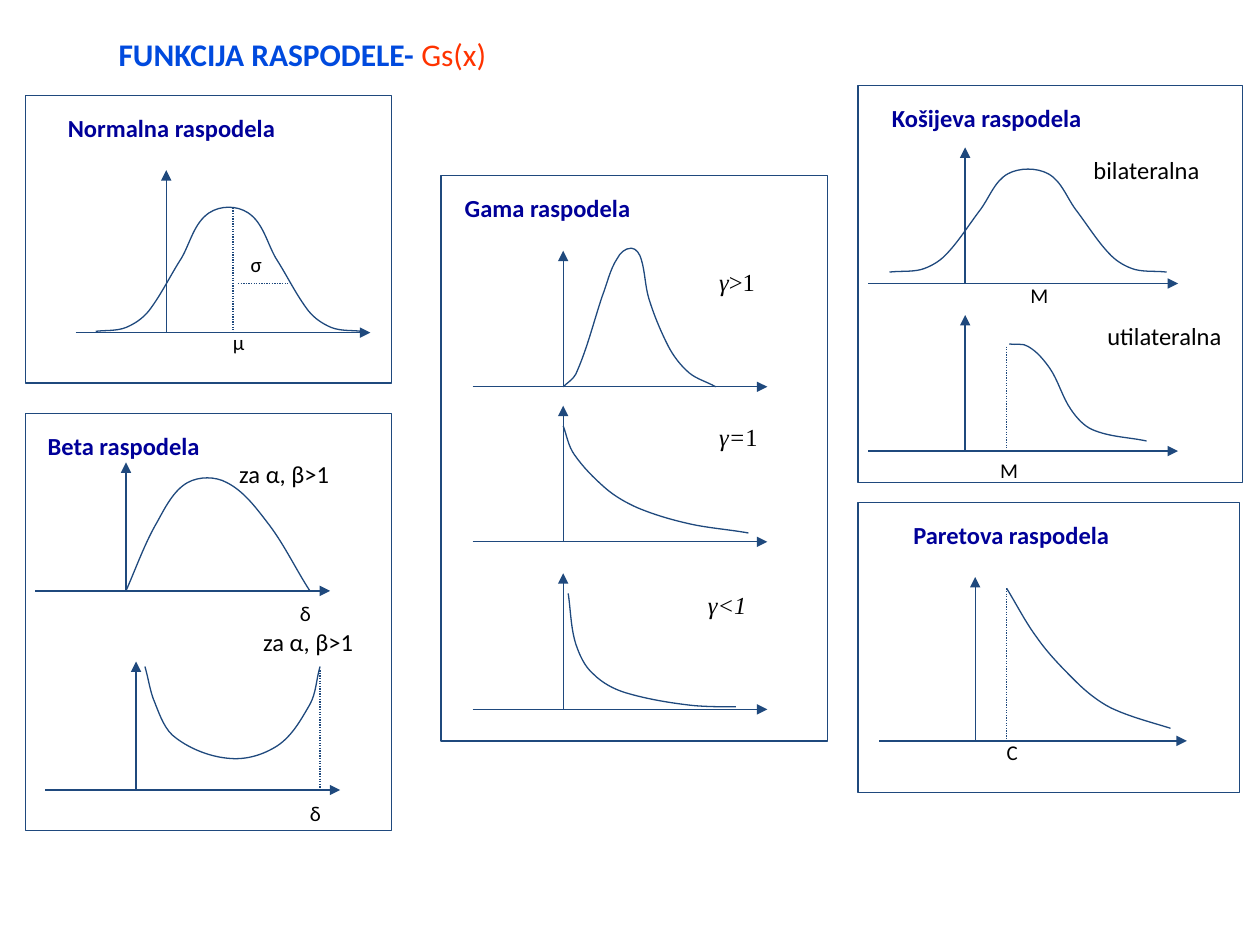
from dataclasses import dataclass, field
from math import hypot

from lxml.etree import SubElement
from pptx import Presentation
from pptx.dml.color import RGBColor
from pptx.enum.dml import MSO_LINE
from pptx.enum.shapes import MSO_CONNECTOR, MSO_SHAPE
from pptx.enum.text import MSO_ANCHOR, MSO_AUTO_SIZE, PP_ALIGN
from pptx.oxml.ns import qn
from pptx.util import Pt

PX = 9144  # EMU per px, 100 px to the inch
COLORS = {"line": "1F497D", "heading": "000099", "title": "004ADE",
          "accent": "FF3300", "text": "000000"}
SANS, SERIF = "Calibri", "Times New Roman"
Point = tuple[int, int]


@dataclass
class Label:
    x: int
    y: int
    text: str
    w: int = 30
    size: int = 12
    roman: str = ""  # upright ending after an italic start
    font: str = SANS
    tight: bool = False  # no insets


@dataclass
class Axes:
    left: int
    base: int
    width: int = 234
    height: int = 108
    offset: int = 72  # from the left end to the vertical axis


@dataclass
class Panel:
    heading: str
    indent: int
    frame: tuple[int, int, int, int]
    axes: list[Axes]
    curves: list[list[Point]]  # points that a smooth curve passes through
    labels: list[Label]
    dotted: list[tuple[int, int, int, int]] = field(default_factory=list)


BELL_HALF = [(0, 108), (24, 105), (42, 92), (68, 50), (90, 14)]
BELL = BELL_HALF + [(210 - x, y) for x, y in reversed(BELL_HALF)]


def bell(left: int, top: int, w: int, h: int) -> list[Point]:
    """The symmetric bell curve fitted into a box."""
    return [(left + round(x * w / 210), top + round(y * h / 108)) for x, y in BELL]


def gamma(x: int, base: int, text: str, roman: str = "") -> Label:
    return Label(x, base - 100, text, 53, 14, roman, SERIF)


def tight(x: int, y: int, text: str) -> Label:
    return Label(x, y, text, 10, tight=True)


GAMMA_BASES = (307, 430, 563)
PANELS = [
    Panel("Gama raspodela", 9, (350, 139, 307, 449),
          [Axes(375, base) for base in GAMMA_BASES],
          [[(447, 307), (457, 297), (478, 235), (490, 205), (501, 197),
            (509, 206), (515, 237), (530, 274), (547, 296), (568, 307)],
           [(447, 338), (456, 361), (480, 387), (506, 403), (544, 415), (594, 423)],
           [(451, 471), (457, 511), (471, 535), (497, 550), (550, 560), (584, 561)]],
          [gamma(x, base, *text) for x, base, text in
           zip((561, 561, 552), GAMMA_BASES, (("γ", ">1"), ("γ=", "1"), ("γ<1",)))]),
    Panel("Beta raspodela", 8, (20, 328, 291, 331),
          [Axes(28, 469, height=102), Axes(36, 627, height=102)],
          [[(100, 469), (125, 414), (149, 383), (180, 383), (214, 417), (246, 469)],
           [(115, 529), (123, 558), (140, 586), (183, 602), (220, 592),
            (246, 559), (254, 529)]],
          [Label(180, 359, "za α, β>1", 101, 14), Label(199, 493, "za α, β>1", 101, 14),
           tight(238, 477, "δ"), tight(246, 635, "δ")],
          [(254, 532, 254, 627)]),
    Panel("Normalna raspodela", 24, (20, 76, 291, 228),
          [Axes(60, 264, height=129)],
          [bell(76, 155, 211, 108)],
          [Label(175, 257, "μ"), Label(189, 195, "σ")],
          [(189, 225, 230, 225), (185, 165, 185, 264)]),
    Panel("Košijeva raspodela", 17, (681, 68, 305, 315),
          [Axes(689, base, 246, offset=77) for base in (225, 358)],
          [bell(706, 126, 220, 90),
           [(801, 273), (816, 275), (833, 292), (850, 325), (867, 341), (910, 350)]],
          [Label(858, 118, "bilateralna", 110, 14),
           Label(869, 250, "utilateralna", 115, 14),
           Label(808, 219, "M"), Label(784, 358, "M")],
          [(799, 275, 799, 358)]),
    Panel("Paretova raspodela", 34, (681, 399, 303, 230),
          [Axes(698, 588, 244, 130, 76)],
          [[(799, 467), (823, 506), (854, 541), (882, 562), (929, 578)]],
          [tight(799, 587, "C")],
          [(799, 467, 799, 587)]),
]


def rgb(name: str) -> RGBColor:
    return RGBColor.from_string(COLORS[name])


def style_line(sp) -> None:
    sp.line.color.rgb = rgb("line")
    sp.line.width = Pt(0.75)


def style_outline(sp) -> None:
    """Unfilled shape with the common line."""
    sp.fill.background()
    sp.shadow.inherit = False
    style_line(sp)


def add_line(shapes, ends: tuple[int, int, int, int], dotted: bool = False) -> None:
    """Dotted guide, or axis with an arrowhead at its end."""
    sp = shapes.add_connector(MSO_CONNECTOR.STRAIGHT, *(v * PX for v in ends))
    style_line(sp)
    if dotted:
        sp.line.dash_style = MSO_LINE.ROUND_DOT
    else:
        SubElement(sp.line._get_or_add_ln(), qn("a:tailEnd"), type="triangle")
    SubElement(sp._element.spPr, qn("a:effectLst"))


def smooth(knots: list[Point]) -> list[Point]:
    """Bezier points of a curve whose tangents follow the neighbouring knots."""
    tangents = []
    for i in range(len(knots)):
        (x0, y0), (x1, y1) = knots[max(i - 1, 0)], knots[min(i + 1, len(knots) - 1)]
        d = hypot(x1 - x0, y1 - y0)
        tangents.append(((x1 - x0) / d, (y1 - y0) / d))
    points = knots[:1]
    for i, ((x0, y0), (x1, y1)) in enumerate(zip(knots, knots[1:])):
        reach = hypot(x1 - x0, y1 - y0) / 3
        (u0, v0), (u1, v1) = tangents[i:i + 2]
        points += [(x0 + reach * u0, y0 + reach * v0),
                   (x1 - reach * u1, y1 - reach * v1), (x1, y1)]
    return points


def add_curve(shapes, knots: list[Point]) -> None:
    points = smooth(knots)
    builder = shapes.build_freeform(*points[0], scale=PX)
    builder.add_line_segments([(round(x), round(y)) for x, y in points[1:]], close=False)
    sp = builder.convert_to_shape()
    style_outline(sp)
    # Every three straight steps become one cubic Bezier
    outline = next(sp._element.iter(qn("a:path")))
    steps = outline.findall(qn("a:lnTo"))
    for i in range(0, len(steps), 3):
        bezier = SubElement(outline, qn("a:cubicBezTo"))
        for step in steps[i:i + 3]:
            bezier.append(step[0])
            outline.remove(step)


def add_run(p, text: str, font: str, size: int, color: str,
            bold: bool = False, italic: bool = False) -> None:
    r = p.add_run()
    r.text = text
    r.font.name, r.font.size = font, Pt(size)
    r.font.bold, r.font.italic = bold, italic
    r.font.color.rgb = rgb(color)


def add_label(shapes, label: Label, heading: bool = False) -> None:
    h = 20 if label.tight else 33 if label.size == 14 else 30
    sp = shapes.add_textbox(*(v * PX for v in (label.x, label.y, label.w, h)))
    tf = sp.text_frame
    tf.word_wrap = heading
    tf.auto_size = MSO_AUTO_SIZE.SHAPE_TO_FIT_TEXT
    if label.tight:
        tf.margin_left = tf.margin_right = tf.margin_top = tf.margin_bottom = 0
    p = tf.paragraphs[0]
    color = "heading" if heading else "text"
    add_run(p, label.text, label.font, label.size, color, heading, label.font == SERIF)
    if label.roman:
        add_run(p, label.roman, label.font, label.size, color)


def add_panel(s, panel: Panel) -> None:
    shapes = s.shapes.add_group_shape().shapes
    style_outline(shapes.add_shape(MSO_SHAPE.RECTANGLE, *(v * PX for v in panel.frame)))
    left, top = panel.frame[:2]
    add_label(shapes, Label(left + panel.indent, top + 9, panel.heading, 230, 14), True)
    for a in panel.axes:
        x = a.left + a.offset
        add_line(shapes, (a.left, a.base, a.left + a.width, a.base))
        add_line(shapes, (x, a.base, x, a.base - a.height))
    for knots in panel.curves:
        add_curve(shapes, knots)
    for ends in panel.dotted:
        add_line(shapes, ends, dotted=True)
    for label in panel.labels:
        add_label(shapes, label)


def add_title(s) -> None:
    sp = s.shapes.title
    sp.left, sp.top, sp.width, sp.height = (v * PX for v in (0, 21, 480, 43))
    sp.text_frame.vertical_anchor = MSO_ANCHOR.MIDDLE
    p = sp.text_frame.paragraphs[0]
    p.alignment = PP_ALIGN.CENTER
    add_run(p, "FUNKCIJA RASPODELE- ", SANS, 18, "title", bold=True)
    add_run(p, "Gs(x)", SANS, 18, "accent")


def main() -> None:
    prs = Presentation()
    prs.slide_width, prs.slide_height = 1000 * PX, 750 * PX
    s = prs.slides.add_slide(prs.slide_layouts[5])
    add_title(s)
    for panel in PANELS:
        add_panel(s, panel)
    prs.save("out.pptx")


if __name__ == "__main__":
    main()
